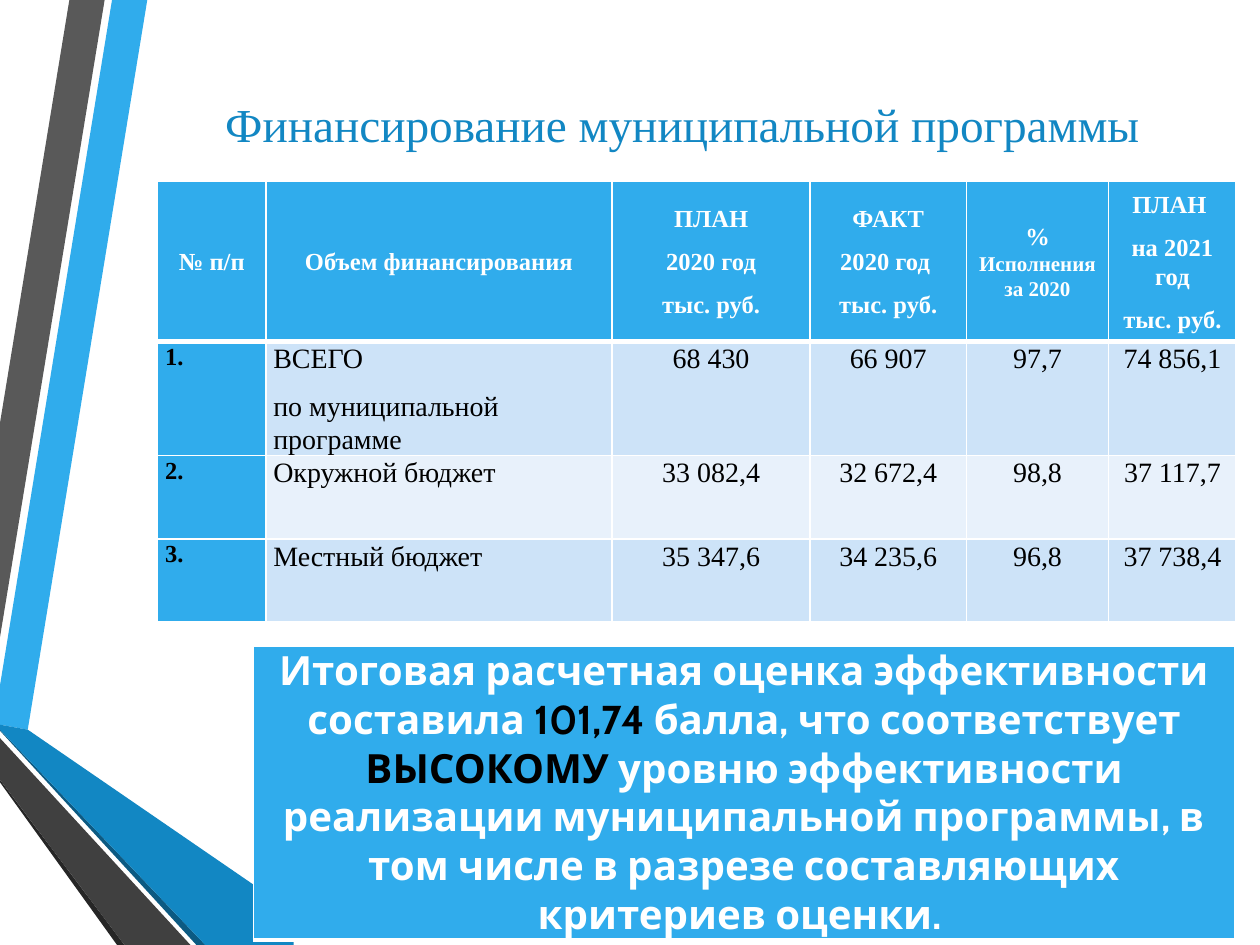
from lxml import etree
from pptx import Presentation
from pptx.dml.color import RGBColor
from pptx.enum.text import MSO_ANCHOR, MSO_AUTO_SIZE, PP_ALIGN
from pptx.oxml.ns import qn
from pptx.util import Cm, Pt

CENTER, LEFT = PP_ALIGN.CENTER, PP_ALIGN.LEFT
MIDDLE, TOP = MSO_ANCHOR.MIDDLE, MSO_ANCHOR.TOP

WHITE = RGBColor(0xFF, 0xFF, 0xFF)
BLACK = RGBColor(0x00, 0x00, 0x00)
SKY = RGBColor(0x30, 0xAC, 0xEC)
BLUE = RGBColor(0x12, 0x87, 0xC3)
DEEP_BLUE = RGBColor(0x0C, 0x5A, 0x82)
GRAY = RGBColor(0x59, 0x59, 0x59)
DARK_GRAY = RGBColor(0x40, 0x40, 0x40)
NEAR_BLACK = RGBColor(0x26, 0x26, 0x26)
BAND_DARK = RGBColor(0xCD, 0xE3, 0xF8)
BAND_LIGHT = RGBColor(0xE8, 0xF1, 0xFB)
SERIF, SANS = "Times New Roman", "Cabin"

# Content
TITLE = "Финансирование муниципальной программы"
HEADERS = [
    "№ п/п",
    "Объем финансирования",
    "ПЛАН\n2020 год\nтыс. руб.",
    "ФАКТ\n2020 год \nтыс. руб.",
    "%\nИсполнения\nза 2020",
    "ПЛАН \nна 2021 год\nтыс. руб.",
]
PERCENT_COLUMN = 4
BUDGET_ROWS = [
    ["1.", "ВСЕГО\nпо муниципальной программе", "68 430", "66 907", "97,7", "74 856,1"],
    ["2.", "Окружной бюджет", "33 082,4", "32 672,4", "98,8", "37 117,7"],
    ["3.", "Местный бюджет", "35 347,6", "34 235,6", "96,8", "37 738,4"],
]
SUMMARY = [
    ("Итоговая расчетная оценка эффективности составила ", WHITE),
    ("101,74", BLACK),
    (" балла, что соответствует ", WHITE),
    ("ВЫСОКОМУ", BLACK),
    (" уровню эффективности реализации муниципальной программы, "
     "в том числе в разрезе составляющих критериев оценки. ", WHITE),
]

# Ribbon outlines in centimetres
RIBBONS = [
    (SKY, [(0, 13.82), (0, 14.61), (0.56, 14.71), (2.97, 0), (2.26, 0)]),
    (GRAY, [(2.11, 0), (1.4, 0), (0, 8.53), (0, 12.85)]),
    (NEAR_BLACK, [(0, 15.72), (0, 15.77), (2.36, 19.05), (2.51, 19.05)]),
    (DEEP_BLUE, [(0, 14.71), (0, 14.73), (3.96, 19.05), (4.14, 19.05)]),
    (BLUE, [(0, 14.71), (4.14, 19.05), (5.92, 19.05), (5.92, 18.39),
            (0.56, 14.71), (0, 14.61)]),
    (DARK_GRAY, [(0, 15.72), (2.51, 19.05), (3.84, 19.05), (0, 14.88)]),
]
COLUMN_WIDTHS = [2.18, 6.98, 3.99, 3.15, 2.87, 2.57]
ROW_HEIGHTS = [3.23, 1.8, 1.68, 1.68]


def add_ribbon(slide, color, points):
    corners = [(Cm(x), Cm(y)) for x, y in points]
    builder = slide.shapes.build_freeform(*corners[0], scale=1.0)
    builder.add_line_segments(corners[1:], close=True)
    shape = builder.convert_to_shape()
    shape.shadow.inherit = False
    shape.fill.solid()
    shape.fill.fore_color.rgb = color
    shape.line.fill.background()


def add_table(slide, left, top, widths, heights):
    table = slide.shapes.add_table(
        len(heights), len(widths), Cm(left), Cm(top),
        Cm(sum(widths)), Cm(sum(heights))).table
    for column, width in zip(table.columns, widths):
        column.width = Cm(width)
    for row, height in zip(table.rows, heights):
        row.height = Cm(height)
    return table


def style_cell(cell, fill, anchor=TOP, top=1, bottom=1):
    properties = cell._tc.get_or_add_tcPr()
    for side, width in (("L", 1), ("R", 1), ("T", top), ("B", bottom)):
        line = etree.SubElement(properties, qn(f"a:ln{side}"), w=str(Pt(width)))
        solid = etree.SubElement(line, qn("a:solidFill"))
        etree.SubElement(solid, qn("a:srgbClr"), val=str(WHITE))
    cell.fill.solid()
    cell.fill.fore_color.rgb = fill
    cell.margin_left = cell.margin_right = Cm(0.15)
    cell.margin_top = cell.margin_bottom = 0
    cell.vertical_anchor = anchor


def style_font(font, name, size, color, bold=False):
    font.name = name
    font.size = Pt(size)
    font.color.rgb = color
    font.bold = bold


def write_cell(cell, text, size, color, bold, alignment, space_after=8):
    cell.text_frame.text = text
    for paragraph in cell.text_frame.paragraphs:
        paragraph.alignment = alignment
        paragraph.line_spacing = 1.07
        paragraph.space_after = Pt(space_after)
        for run in paragraph.runs:
            style_font(run.font, SERIF, size, color, bold)


def main():
    presentation = Presentation()
    presentation.slide_width, presentation.slide_height = Cm(25.4), Cm(19.05)
    slide = presentation.slides.add_slide(presentation.slide_layouts[5])

    # Ribbons along the left edge
    for color, points in RIBBONS:
        add_ribbon(slide, color, points)

    # Title
    title = slide.shapes.title
    title.left, title.top, title.width, title.height = Cm(3.48), Cm(0.97), Cm(20.55), Cm(3.05)
    frame = title.text_frame
    frame.text = TITLE
    frame.auto_size = MSO_AUTO_SIZE.NONE
    frame.vertical_anchor = MIDDLE
    frame.paragraphs[0].alignment = CENTER
    style_font(frame.paragraphs[0].runs[0].font, SERIF, 27, BLUE)

    # Budget table
    budget = add_table(slide, 3.18, 3.66, COLUMN_WIDTHS, ROW_HEIGHTS)
    for column, text in enumerate(HEADERS):
        cell = budget.cell(0, column)
        is_percent = column == PERCENT_COLUMN
        style_cell(cell, SKY, MIDDLE, bottom=3)
        write_cell(cell, text, 14, WHITE, True, CENTER, 0 if is_percent else 8)
        if is_percent:
            for paragraph in cell.text_frame.paragraphs[1:]:
                paragraph.runs[0].font.size = Pt(12)
    for row, values in enumerate(BUDGET_ROWS, start=1):
        band = BAND_DARK if row % 2 else BAND_LIGHT
        for column, text in enumerate(values):
            cell = budget.cell(row, column)
            is_number = column == 0
            style_cell(cell, SKY if is_number else band, top=3 if row == 1 else 1)
            write_cell(cell, text, 14 if is_number else 16, BLACK, is_number,
                       LEFT if column < 2 else CENTER)

    # Summary panel
    panel = add_table(slide, 5.11, 13.03, [19.79], [5.49]).cell(0, 0)
    style_cell(panel, SKY, bottom=3)
    paragraph = panel.text_frame.paragraphs[0]
    paragraph.alignment = CENTER
    for text, color in SUMMARY:
        run = paragraph.add_run()
        run.text = text
        style_font(run.font, SANS, 23, color, True)

    presentation.save("out.pptx")


if __name__ == "__main__":
    main()
